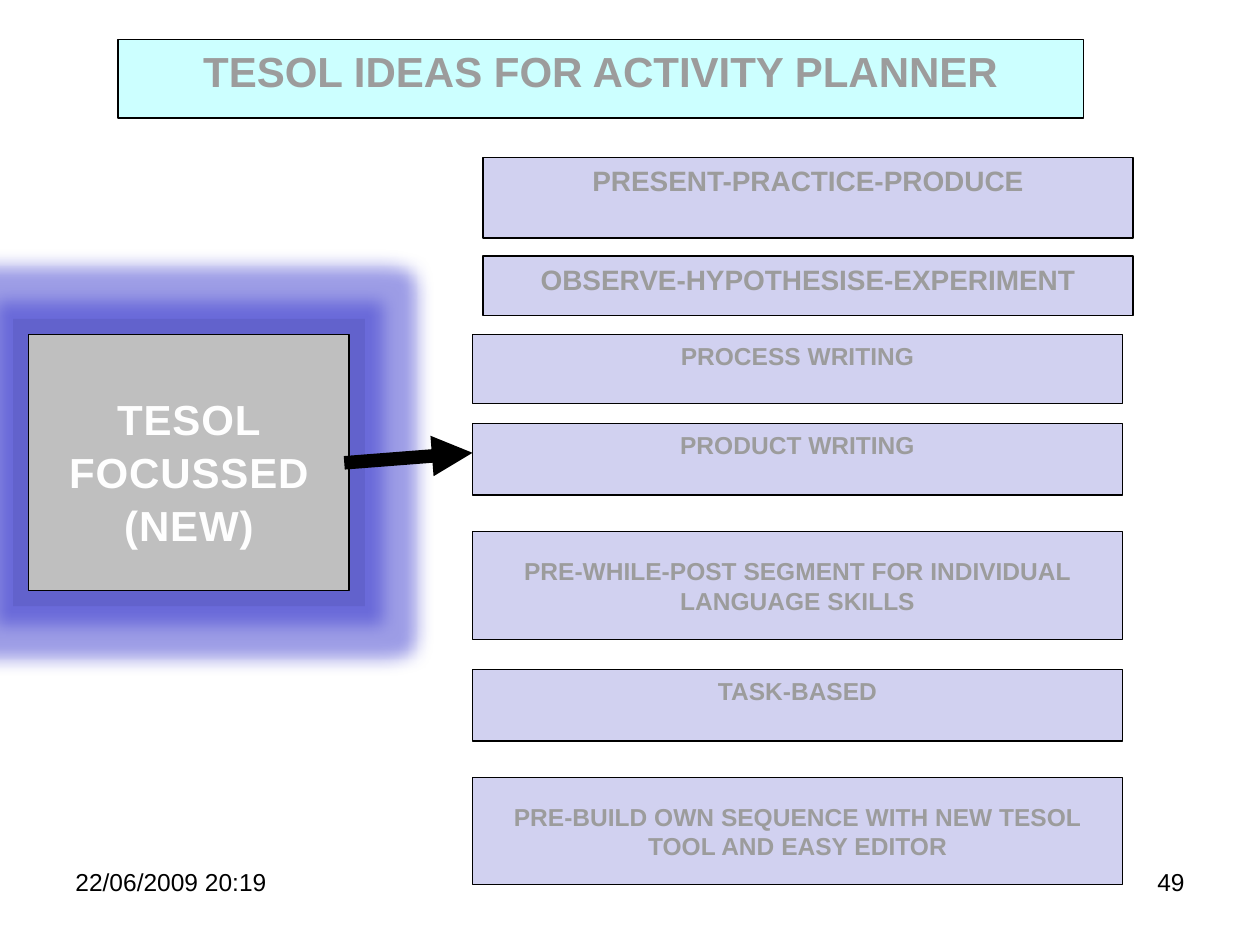
import pptx
import pptx.util
import pptx.dml.color
import pptx.enum.shapes
import pptx.enum.text
import pptx.oxml.ns
import lxml.etree

Pt = pptx.util.Pt
ALIGN = pptx.enum.text.PP_ALIGN
ANCHOR = pptx.enum.text.MSO_ANCHOR
qn = pptx.oxml.ns.qn

LEFT, RIGHT = 270, 276
STRATEGIES = [
    ("PRESENT-PRACTICE-PRODUCE", RIGHT, 90, 46, 16, ANCHOR.TOP),
    ("OBSERVE-HYPOTHESISE-EXPERIMENT", RIGHT, 146.25, 34, 16, ANCHOR.TOP),
    ("PROCESS WRITING", LEFT, 191.25, 39.5, 14, ANCHOR.TOP),
    ("PRODUCT WRITING", LEFT, 242, 41, 14, ANCHOR.TOP),
    ("PRE-WHILE-POST SEGMENT FOR INDIVIDUAL LANGUAGE SKILLS",
     LEFT, 303.75, 61.75, 14, ANCHOR.MIDDLE),
    ("TASK-BASED", LEFT, 382.5, 41, 14, ANCHOR.TOP),
    ("PRE-BUILD OWN SEQUENCE WITH NEW TESOL TOOL AND EASY EDITOR",
     LEFT, 444.25, 61.25, 14, ANCHOR.MIDDLE),
]


def rgb(value):
    return pptx.dml.color.RGBColor.from_string(value)


def add_color(parent, value):
    fill = lxml.etree.SubElement(parent, qn("a:solidFill"))
    lxml.etree.SubElement(fill, qn("a:srgbClr"), val=value)


def write(s, text, size=14, color="9C9C9C", bold=True, align=ALIGN.CENTER,
          anchor=ANCHOR.TOP, outline=None, spacing=None, leading=None):
    tf = s.text_frame
    tf.word_wrap = True
    tf.auto_size = pptx.enum.text.MSO_AUTO_SIZE.NONE
    tf.vertical_anchor = anchor
    for i, line in enumerate(text.split("\n")):
        p = tf.paragraphs[0] if i == 0 else tf.add_paragraph()
        p.alignment = align
        if leading:
            p.line_spacing = leading
        r = p.add_run()
        r.text = line
        r.font.name = "Arial"
        r.font.size = Pt(size)
        r.font.bold = bold
        r.font.color.rgb = rgb(color)
        rpr = r.font._element
        if spacing:
            rpr.set("spc", str(int(spacing * 100)))
        if outline:
            ln = lxml.etree.Element(qn("a:ln"), w=str(Pt(1)))
            add_color(ln, outline)
            rpr.insert(0, ln)


def paint(s, fill, line="000000"):
    s.fill.solid()
    s.fill.fore_color.rgb = rgb(fill)
    if line:
        s.line.color.rgb = rgb(line)
        s.line.width = Pt(0.75)
    else:
        s.line.fill.background()


def add_box(sp, x, y, w, h, fill, line="000000"):
    s = sp.add_shape(pptx.enum.shapes.MSO_SHAPE.RECTANGLE,
                     Pt(x), Pt(y), Pt(w), Pt(h))
    s.shadow.inherit = False
    paint(s, fill, line)
    return s


def add_glow(s, radius, color, alpha):
    effects = s._element.spPr.find(qn("a:effectLst"))
    glow = lxml.etree.SubElement(effects, qn("a:glow"), rad=str(Pt(radius)))
    clr = lxml.etree.SubElement(glow, qn("a:srgbClr"), val=color)
    lxml.etree.SubElement(clr, qn("a:alpha"), val=str(alpha * 1000))


def add_title(s, text):
    s.left, s.top, s.width, s.height = Pt(67.5), Pt(22.5), Pt(551.5), Pt(45)
    paint(s, "CCFFFF")
    write(s, text, size=24)


def add_focus(sp, text):
    x, y, w, h, halo = 16.5, 191.25, 183, 146.25, 9
    back = add_box(sp, x - halo, y - halo, w + 2 * halo, h + 2 * halo,
                   "6262CC", None)
    add_glow(back, 20, "3333CC", 48)
    s = add_box(sp, x, y, w, h, "BFBFBF")
    s.text_frame.margin_top = Pt(12)
    write(s, text, size=24, color="FEFEFE", anchor=ANCHOR.MIDDLE,
          outline="202086", spacing=0.5, leading=1.05)


def add_arrow(sp, x1, y1, x2, y2):
    s = sp.add_connector(pptx.enum.shapes.MSO_CONNECTOR.STRAIGHT,
                         Pt(x1), Pt(y1), Pt(x2), Pt(y2))
    s.line.color.rgb = rgb("000000")
    s.line.width = Pt(7.75)
    lxml.etree.SubElement(s.line._get_or_add_ln(), qn("a:tailEnd"),
                          type="triangle")
    lxml.etree.SubElement(s._element.spPr, qn("a:effectLst"))


def add_footer(sp, text, x, align):
    s = sp.add_textbox(Pt(x), Pt(491.75), Pt(168), Pt(37.5))
    write(s, text, color="000000", bold=False, align=align)


def main():
    prs = pptx.Presentation()
    prs.slide_width, prs.slide_height = Pt(720), Pt(540)
    slide = prs.slides.add_slide(prs.slide_layouts[5])
    sp = slide.shapes
    add_title(sp.title, "TESOL IDEAS FOR ACTIVITY PLANNER")
    add_focus(sp, "TESOL FOCUSSED\n(NEW)")
    for text, x, y, h, size, anchor in STRATEGIES:
        s = add_box(sp, x, y, 371.5, h, "D1D1F0")
        write(s, text, size=size, anchor=anchor)
    add_arrow(sp, 196.75, 264.5, 270, 258.75)
    add_footer(sp, "22/06/2009 20:19", 36, ALIGN.LEFT)
    add_footer(sp, "49", 516, ALIGN.RIGHT)
    prs.save("out.pptx")


if __name__ == "__main__":
    main()
